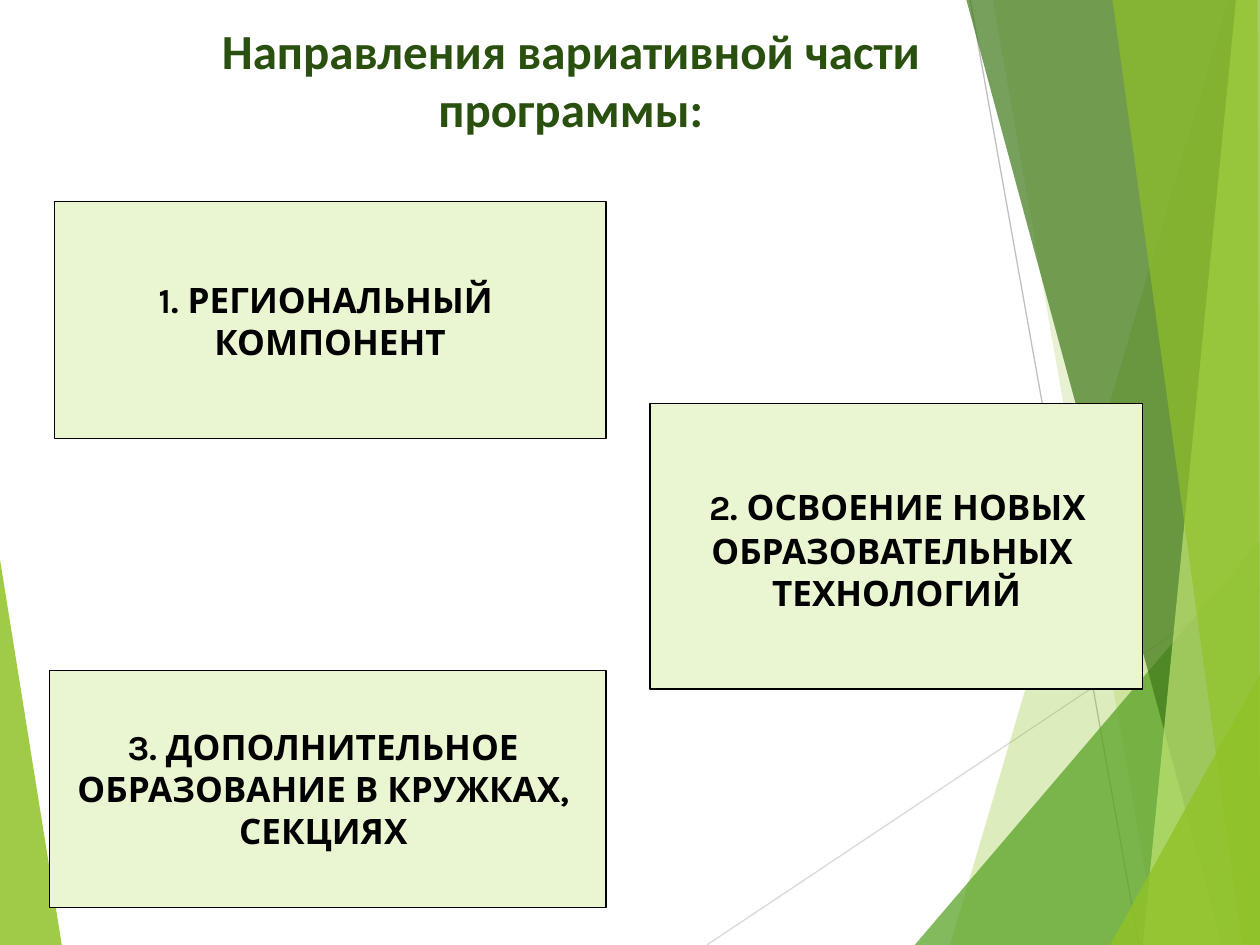
from lxml import etree
from pptx import Presentation
from pptx.dml.color import RGBColor
from pptx.enum.shapes import MSO_CONNECTOR, MSO_SHAPE
from pptx.enum.text import MSO_ANCHOR, PP_ALIGN
from pptx.oxml.ns import qn
from pptx.util import Inches, Pt

CENTER, MIDDLE, TOP = PP_ALIGN.CENTER, MSO_ANCHOR.MIDDLE, MSO_ANCHOR.TOP
RECTANGLE, STRAIGHT = MSO_SHAPE.RECTANGLE, MSO_CONNECTOR.STRAIGHT

THEME = {
    "lime": "90C226", "green": "54A021", "forest": "3F7819", "pale": "C0E474",
    "ray": "D9D9D9", "beam": "BFBFBF", "card": "EAF6D1", "border": "000000",
    "title": {"name": "Calibri", "size": Pt(28), "bold": True, "color": "2A5010"},
    "label": {"name": "Karla", "size": Pt(20), "bold": True, "color": "000000"},
    "lead": {"name": "Karla", "size": Pt(24), "bold": True, "color": "000000"},
    "line": Pt(0.75),
}

deck = Presentation()
deck.slide_width, deck.slide_height = Inches(10), Inches(7.5)
page = deck.slides.add_slide(deck.slide_layouts[6])

# Grid of square cells: 100 columns by 75 rows
CELL = deck.slide_width // 100
RIGHT, BOTTOM = 100, 75


def grid(*cells):
    return [round(cell * CELL) for cell in cells]


def add_span(para, text, style):
    span = para.add_run()
    span.text = text
    for name, value in style.items():
        if name == "color":
            span.font.color.rgb = RGBColor.from_string(value)
        else:
            setattr(span.font, name, value)


# Backdrop, back to front: (colour, opacity in percent, corners) or (colour, ends)
backdrop = [
    ("lime", 85, [(0, 44.4), (4.9, BOTTOM), (0, BOTTOM)]),
    ("ray", [56.1, BOTTOM, RIGHT, 45.7]),
    ("beam", [77, 0, 90.4, BOTTOM]),
    ("lime", 30, [(97.5, 0), (75.4, BOTTOM), (RIGHT, BOTTOM), (RIGHT, 0)]),
    ("lime", 20, [(78.8, 0), (91.9, BOTTOM), (RIGHT, BOTTOM), (RIGHT, 0)]),
    ("green", 72, [(72.6, BOTTOM), (RIGHT, 42.9), (RIGHT, BOTTOM)]),
    ("forest", 70, [(76.7, 0), (97, BOTTOM), (RIGHT, BOTTOM), (RIGHT, 0)]),
    ("pale", 70, [(98.1, 0), (90.7, BOTTOM), (RIGHT, BOTTOM), (RIGHT, 0)]),
    ("lime", 65, [(88.3, 0), (98.6, BOTTOM), (RIGHT, BOTTOM), (99.8, 0)]),
    ("lime", 80, [(88.1, BOTTOM), (RIGHT, 53.5), (RIGHT, BOTTOM)]),
]
for color, *geometry in backdrop:
    rgb = RGBColor.from_string(THEME[color])
    if len(geometry) == 1:
        ray = page.shapes.add_connector(STRAIGHT, *grid(*geometry[0]))
        ray.line.color.rgb = rgb
        ray.line.width = THEME["line"]
        etree.SubElement(ray.line._get_or_add_ln().getparent(), qn("a:effectLst"))
        continue
    opacity, corners = geometry
    start, *others = [grid(*corner) for corner in corners]
    builder = page.shapes.build_freeform(*start)
    builder.add_line_segments(others, close=True)
    facet = builder.convert_to_shape()
    facet.shadow.inherit = False
    facet.line.fill.background()
    facet.fill.solid()
    facet.fill.fore_color.rgb = rgb
    tint = facet.fill._xPr.find(qn("a:solidFill"))[0]
    etree.SubElement(tint, qn("a:alpha"), val=str(opacity * 1000))

# Title
title = page.shapes.add_textbox(*grid(10.6, 1.1, 69.4, 14.4))
title.text_frame.word_wrap = True
title.text_frame.vertical_anchor = TOP
para = title.text_frame.paragraphs[0]
para.alignment = CENTER
add_span(para, "Направления вариативной части программы:", THEME["title"])

# Cards: place on the grid, then lines of (text, style) spans
cards = [
    ((4.3, 16, 43.8, 18.8), [
        [("1. РЕГИОНАЛЬНЫЙ ", "label")],
        [("КОМПОНЕНТ", "label")]]),
    ((51.6, 32, 39.1, 22.7), [
        [(" ", "lead"), ("2. ОСВОЕНИЕ НОВЫХ ", "label")],
        [("ОБРАЗОВАТЕЛЬНЫХ ", "label")],
        [("ТЕХНОЛОГИЙ", "label")]]),
    ((3.9, 53.2, 44.2, 18.8), [
        [("3. ДОПОЛНИТЕЛЬНОЕ ", "label")],
        [("ОБРАЗОВАНИЕ В КРУЖКАХ, ", "label")],
        [("СЕКЦИЯХ ", "label")]]),
]
for place, lines in cards:
    box = page.shapes.add_shape(RECTANGLE, *grid(*place))
    box.shadow.inherit = False
    box.fill.solid()
    box.fill.fore_color.rgb = RGBColor.from_string(THEME["card"])
    box.line.color.rgb = RGBColor.from_string(THEME["border"])
    box.line.width = THEME["line"]
    frame = box.text_frame
    frame.word_wrap = False
    frame.vertical_anchor = MIDDLE
    for index, spans in enumerate(lines):
        para = frame.add_paragraph() if index else frame.paragraphs[0]
        para.alignment = CENTER
        for text, style in spans:
            add_span(para, text, THEME[style])

deck.save("out.pptx")
